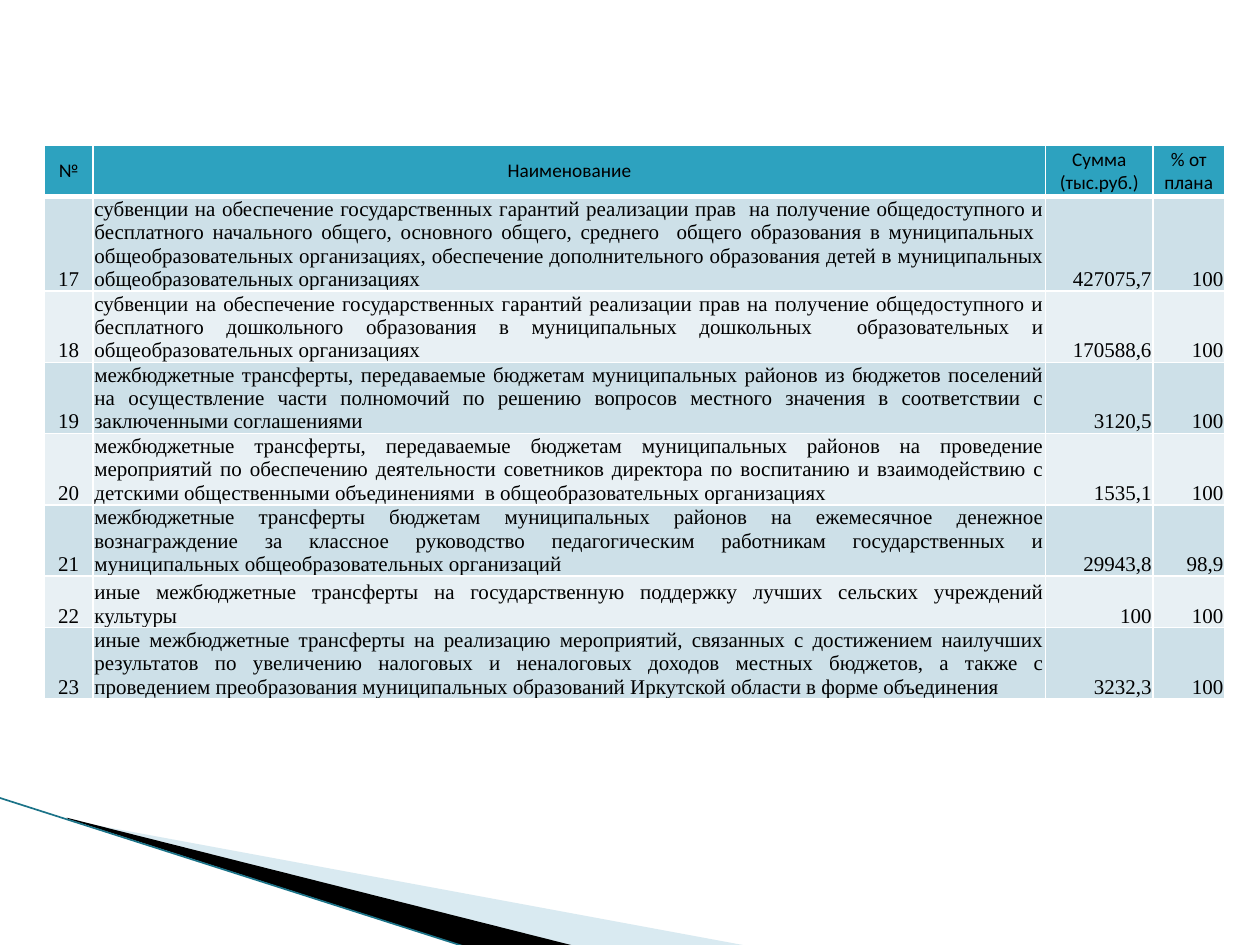
from dataclasses import dataclass
from typing import NamedTuple

from lxml import etree
from pptx import Presentation
from pptx import util as u
from pptx.dml.color import RGBColor
from pptx.enum import shapes, text
from pptx.oxml import ns


@dataclass(frozen=True)
class Theme:
    header: str = "2DA2BF"
    bands: tuple[str, str] = ("CDE0E8", "E8F0F4")
    ink: str = "000000"
    border: str = "FFFFFF"
    pale_wedge: str = "A0CBDC"
    edge: str = "1B7388"
    header_font: str = "Calibri"
    body_font: str = "Times New Roman"
    header_size: int = 11
    body_size: int = 12


class Wedge(NamedTuple):
    points: tuple[tuple[float, float], ...]
    color: str
    opacity: int


class Transfer(NamedTuple):
    number: str
    name: str
    amount: str
    percent: str


class CellStyle(NamedTuple):
    fill: str
    font: str
    size: int
    anchor: text.MSO_ANCHOR
    top_border: float
    bottom_border: float


THEME = Theme()
ALIGN = text.PP_ALIGN
COLUMN_WIDTHS = (0.39, 7.56, 0.85, 0.57)
ROW_HEIGHT = 0.41
HEADERS = ("№", "Наименование", "Сумма\n(тыс.руб.)", "% от плана")
HEADER_ALIGNMENTS = (ALIGN.CENTER,) * len(HEADERS)
BODY_ALIGNMENTS = (ALIGN.CENTER, ALIGN.JUSTIFY, ALIGN.RIGHT, ALIGN.RIGHT)

WEDGES = (
    Wedge(((0.55, 6.51), (5.95, 7.51), (4.56, 7.51), (0.55, 6.5)), THEME.pale_wedge, 40),
    Wedge(((0.53, 6.49), (4.57, 7.51), (3.72, 7.52), (0.54, 6.5)), THEME.ink, 100),
)

TRANSFERS = (
    Transfer("17", "субвенции на обеспечение государственных гарантий реализации прав  на получение "
             "общедоступного и бесплатного начального общего, основного общего, среднего  общего "
             "образования в муниципальных  общеобразовательных организациях, обеспечение "
             "дополнительного образования детей в муниципальных общеобразовательных организациях",
             "427075,7", "100"),
    Transfer("18", "субвенции на обеспечение государственных гарантий реализации прав на получение "
             "общедоступного и бесплатного дошкольного образования в муниципальных дошкольных  "
             "образовательных и общеобразовательных организациях", "170588,6", "100"),
    Transfer("19", "межбюджетные трансферты, передаваемые бюджетам муниципальных районов из бюджетов "
             "поселений на осуществление части полномочий по решению вопросов местного значения в "
             "соответствии с заключенными соглашениями", "3120,5", "100"),
    Transfer("20", "межбюджетные трансферты, передаваемые бюджетам муниципальных районов на проведение "
             "мероприятий по обеспечению деятельности советников директора по воспитанию и "
             "взаимодействию с детскими общественными объединениями  в общеобразовательных "
             "организациях", "1535,1", "100"),
    Transfer("21", "межбюджетные трансферты бюджетам муниципальных районов на ежемесячное денежное "
             "вознаграждение за классное руководство педагогическим работникам государственных и "
             "муниципальных общеобразовательных организаций", "29943,8", "98,9"),
    Transfer("22", "иные межбюджетные трансферты на государственную поддержку лучших сельских "
             "учреждений культуры", "100", "100"),
    Transfer("23", "иные межбюджетные трансферты на реализацию мероприятий, связанных с достижением "
             "наилучших результатов по увеличению налоговых и неналоговых доходов местных бюджетов, "
             "а также с проведением преобразования муниципальных образований Иркутской области в "
             "форме объединения", "3232,3", "100"),
)


def rgb(color: str) -> RGBColor:
    return RGBColor.from_string(color)


def add_wedge(slide, wedge: Wedge) -> None:
    points = [(u.Inches(x), u.Inches(y)) for x, y in wedge.points]
    builder = slide.shapes.build_freeform(*points[0])
    builder.add_line_segments(points[1:], close=True)
    shape = builder.convert_to_shape()
    shape.shadow.inherit = False
    shape.line.fill.background()
    shape.fill.solid()
    shape.fill.fore_color.rgb = rgb(wedge.color)
    if wedge.opacity < 100:
        color = shape.fill._xPr.find(".//" + ns.qn("a:srgbClr"))
        etree.SubElement(color, ns.qn("a:alpha"), val=str(wedge.opacity * 1000))


def add_edge(slide) -> None:
    connector = slide.shapes.add_connector(
        shapes.MSO_CONNECTOR.STRAIGHT,
        u.Inches(-0.01), u.Inches(6.33), u.Inches(3.71), u.Inches(7.52),
    )
    connector.line.color.rgb = rgb(THEME.edge)
    connector.line.width = u.Pt(0.95)
    etree.SubElement(connector._element.spPr, ns.qn("a:effectLst"))


def set_borders(cell, top: float, bottom: float) -> None:
    properties = cell._tc.get_or_add_tcPr()
    for side, width in (("L", 1), ("R", 1), ("T", top), ("B", bottom)):
        line = etree.SubElement(properties, ns.qn(f"a:ln{side}"), w=str(u.Pt(width)))
        fill = etree.SubElement(line, ns.qn("a:solidFill"))
        etree.SubElement(fill, ns.qn("a:srgbClr"), val=THEME.border)


def fill_cell(cell, content: str, alignment: text.PP_ALIGN, style: CellStyle) -> None:
    set_borders(cell, style.top_border, style.bottom_border)
    cell.fill.solid()
    cell.fill.fore_color.rgb = rgb(style.fill)
    cell.vertical_anchor = style.anchor
    cell.margin_left = cell.margin_top = cell.margin_right = u.Inches(0.01)
    cell.margin_bottom = u.Inches(0)
    frame = cell.text_frame
    for index, line in enumerate(content.split("\n")):
        paragraph = frame.add_paragraph() if index else frame.paragraphs[0]
        paragraph.alignment = alignment
        run = paragraph.add_run()
        run.text = line
        run.font.name = style.font
        run.font.size = u.Pt(style.size)
        run.font.bold = False
        run.font.color.rgb = rgb(THEME.ink)


def fill_row(table, row: int, contents: tuple[str, ...],
             alignments: tuple[text.PP_ALIGN, ...], style: CellStyle) -> None:
    for column, (content, alignment) in enumerate(zip(contents, alignments)):
        fill_cell(table.cell(row, column), content, alignment, style)


def add_transfer_table(slide) -> None:
    row_count = len(TRANSFERS) + 1
    table = slide.shapes.add_table(
        row_count, len(COLUMN_WIDTHS), u.Inches(0.35), u.Inches(1.15),
        u.Inches(sum(COLUMN_WIDTHS)), u.Inches(ROW_HEIGHT * row_count),
    ).table
    table.first_row = table.horz_banding = False
    for column, width in zip(table.columns, COLUMN_WIDTHS):
        column.width = u.Inches(width)
    for row in table.rows:
        row.height = u.Inches(ROW_HEIGHT)
    header_style = CellStyle(THEME.header, THEME.header_font, THEME.header_size,
                             text.MSO_ANCHOR.MIDDLE, 1, 3)
    fill_row(table, 0, HEADERS, HEADER_ALIGNMENTS, header_style)
    for index, transfer in enumerate(TRANSFERS):
        style = CellStyle(THEME.bands[index % 2], THEME.body_font, THEME.body_size,
                          text.MSO_ANCHOR.BOTTOM, 1 if index else 3, 1)
        fill_row(table, index + 1, transfer, BODY_ALIGNMENTS, style)


def main() -> None:
    presentation = Presentation()
    presentation.slide_width = u.Inches(10)
    presentation.slide_height = u.Inches(7.5)
    slide = presentation.slides.add_slide(presentation.slide_layouts[6])
    for wedge in WEDGES:
        add_wedge(slide, wedge)
    add_edge(slide)
    add_transfer_table(slide)
    presentation.save("out.pptx")


if __name__ == "__main__":
    main()
